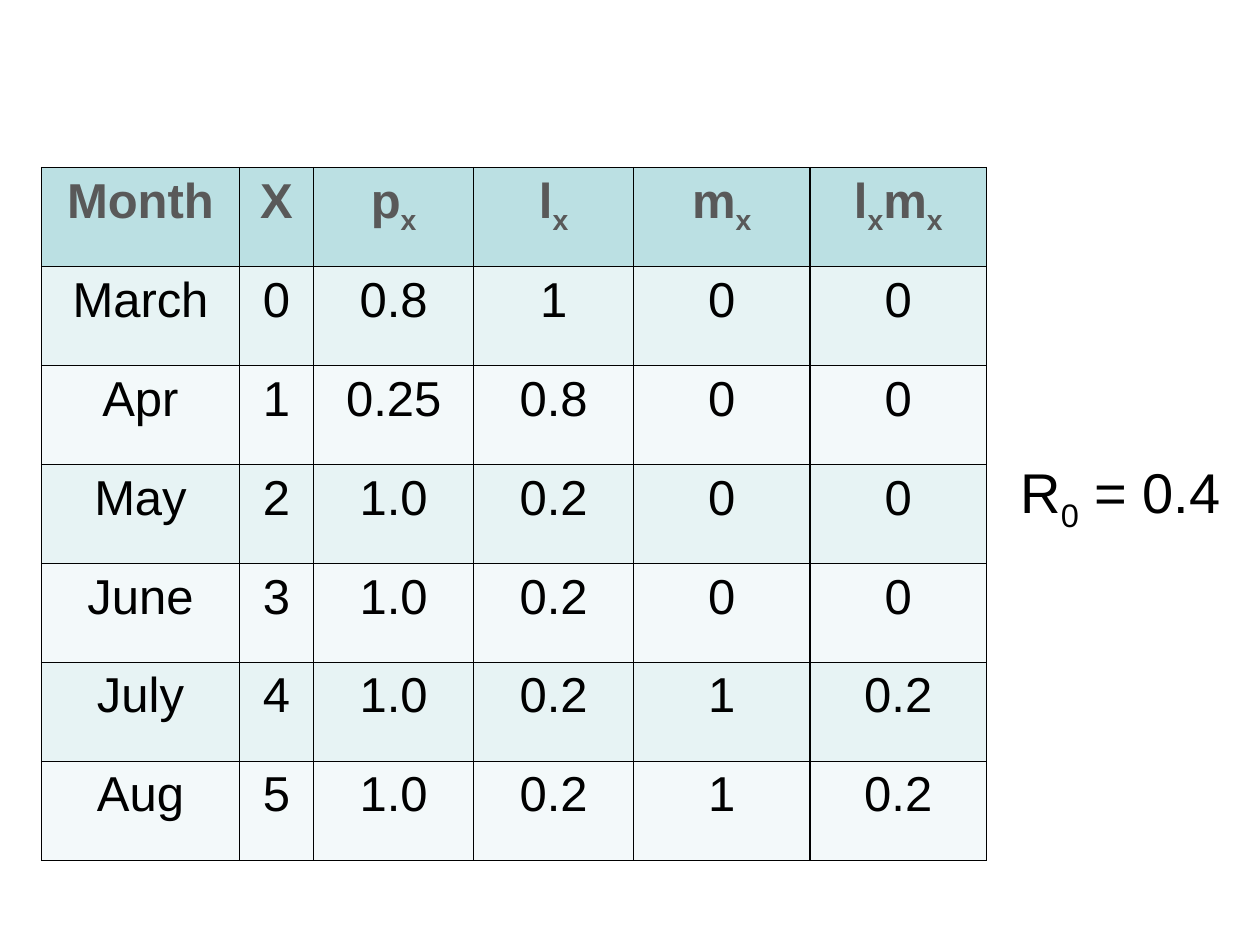
"""Build a slide with a life table by month and its net reproductive rate."""
from dataclasses import dataclass

import lxml.etree
import pptx
import pptx.dml.color
import pptx.enum.text
import pptx.oxml.ns
import pptx.util


@dataclass(frozen=True)
class Theme:
    """Colours, font and type sizes of the slide."""
    font: str = "Arial"
    table_size: int = 28
    rate_size: int = 32
    heading: str = "595959"
    ink: str = "000000"
    header_fill: str = "BBE0E3"
    bands: tuple = ("E7F3F4", "F3F9FA")
    border: float = 1
    subscript: str = "-25000"


THEME = Theme()
WIDTH, HEIGHT = 10, 7.5
TABLE_BOX = (0.33, 1.33, 7.5, 5.5)
RATE_BOX = (8, 3.58, 1.83, 0.64)
COLUMN_WEIGHTS = (1.57, 0.59, 1.27, 1.27, 1.4, 1.4)

HEADINGS = [("Month",), ("X",), ("p", "x"), ("l", "x"), ("m", "x"), ("l", "x", "m", "x")]
MONTHS = [
    ("March", "0", "0.8", "1", "0", "0"),
    ("Apr", "1", "0.25", "0.8", "0", "0"),
    ("May", "2", "1.0", "0.2", "0", "0"),
    ("June", "3", "1.0", "0.2", "0", "0"),
    ("July", "4", "1.0", "0.2", "1", "0.2"),
    ("Aug", "5", "1.0", "0.2", "1", "0.2"),
]
NET_RATE = ("R", "0", " = 0.4")


def rgb(code):
    """Turn a hex code into a colour."""
    return pptx.dml.color.RGBColor.from_string(code)


def write(paragraph, parts, size, colour, bold=False):
    """Add runs in which every second part is a subscript."""
    for position, part in enumerate(parts):
        run = paragraph.add_run()
        run.text = part
        run.font.name = THEME.font
        run.font.size = pptx.util.Pt(size)
        run.font.bold = bold
        run.font.color.rgb = rgb(colour)
        if position % 2:
            run._r.get_or_add_rPr().set("baseline", THEME.subscript)


def outline(cell):
    """Draw a border on all four sides of a cell."""
    qn = pptx.oxml.ns.qn
    properties = cell._tc.get_or_add_tcPr()
    for side in ("lnL", "lnR", "lnT", "lnB"):
        line = lxml.etree.SubElement(
            properties, qn(f"a:{side}"), w=str(pptx.util.Pt(THEME.border)))
        fill = lxml.etree.SubElement(line, qn("a:solidFill"))
        lxml.etree.SubElement(fill, qn("a:srgbClr"), val=THEME.ink)


def add_life_table(slide):
    """Add the table of survival and fecundity by month."""
    rows = [HEADINGS] + [[(value,) for value in month] for month in MONTHS]
    box = [pptx.util.Inches(length) for length in TABLE_BOX]
    life_table = slide.shapes.add_table(len(rows), len(HEADINGS), *box).table
    for column, weight in zip(life_table.columns, COLUMN_WEIGHTS):
        column.width = int(box[2] * weight / sum(COLUMN_WEIGHTS))
    for index, row in enumerate(rows):
        is_header = index == 0
        life_table.rows[index].height = box[3] // len(rows)
        band = THEME.header_fill if is_header else THEME.bands[(index - 1) % 2]
        for cell, parts in zip(life_table.rows[index].cells, row):
            outline(cell)
            cell.fill.solid()
            cell.fill.fore_color.rgb = rgb(band)
            paragraph = cell.text_frame.paragraphs[0]
            paragraph.alignment = pptx.enum.text.PP_ALIGN.CENTER
            write(paragraph, parts, THEME.table_size,
                  THEME.heading if is_header else THEME.ink, is_header)


def add_net_rate(slide):
    """Add the net reproductive rate beside the table."""
    net_rate = slide.shapes.add_textbox(*map(pptx.util.Inches, RATE_BOX)).text_frame
    net_rate.word_wrap = False
    net_rate.auto_size = pptx.enum.text.MSO_AUTO_SIZE.SHAPE_TO_FIT_TEXT
    write(net_rate.paragraphs[0], NET_RATE, THEME.rate_size, THEME.ink)


def main():
    """Build and save the presentation."""
    deck = pptx.Presentation()
    deck.slide_width = pptx.util.Inches(WIDTH)
    deck.slide_height = pptx.util.Inches(HEIGHT)
    slide = deck.slides.add_slide(deck.slide_layouts[6])
    add_life_table(slide)
    add_net_rate(slide)
    deck.save("out.pptx")


if __name__ == "__main__":
    main()
